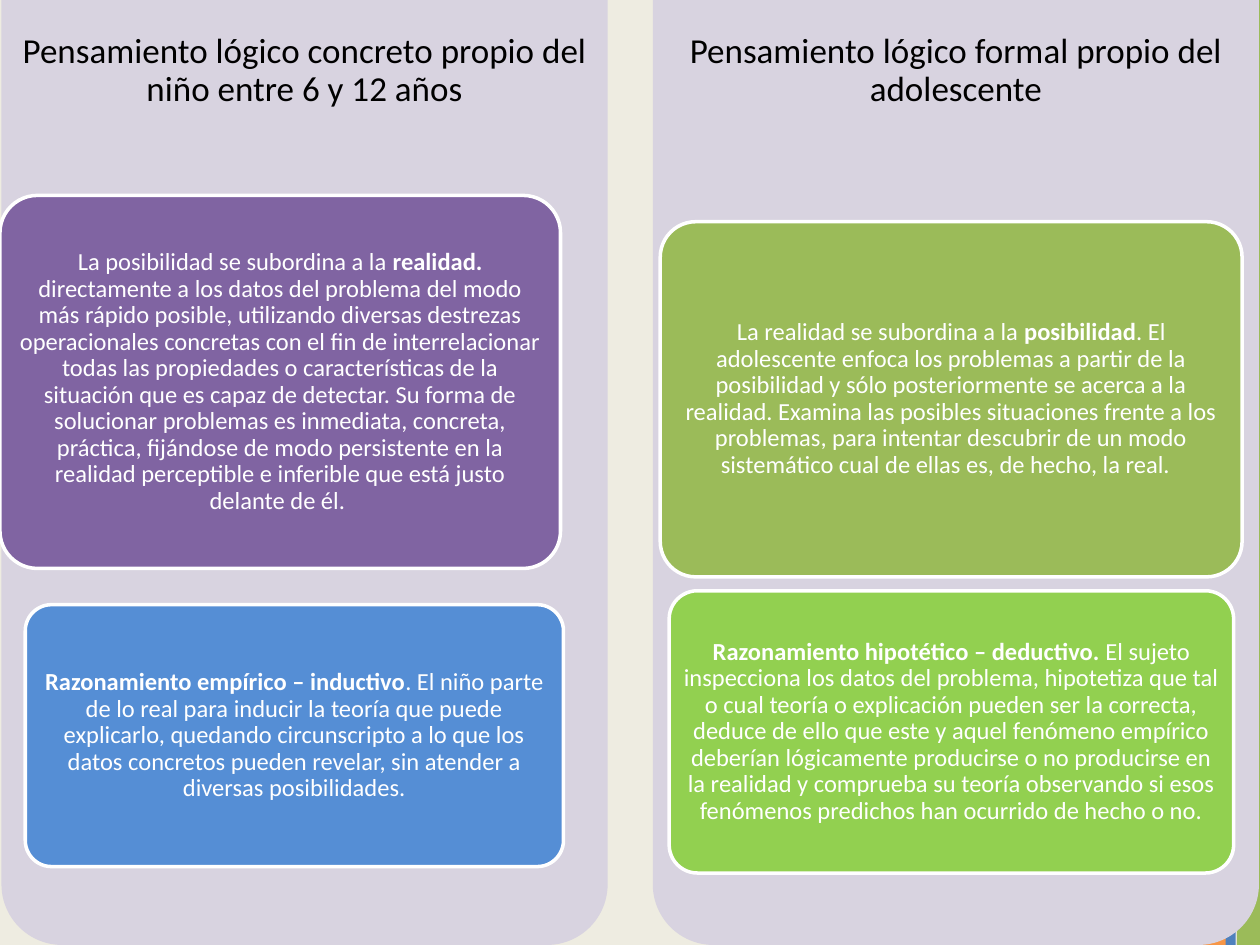
from pptx import Presentation
from pptx import util as u
from pptx.dml.color import RGBColor
from pptx.enum import shapes, text

WIDTH, HEIGHT = 25.4, 19.05
PANEL_TOP, PANEL_WIDTH, HEADING_HEIGHT = -1.68, 12.22, 6.22

STRIPS = [
    (14.76, 9.08, HEIGHT, 0.89, "F79646", 270),
    (15.65, 9.28, HEIGHT, 0.48, "9BBB59", 270),
    (24.71, 0, 0.2, HEIGHT, "4F81BD", 0),
]

COLUMNS = [
    (0.03, "Pensamiento lógico concreto propio del niño entre 6 y 12 años", [
        ((0, 3.94, 11.3, 7.52), "8064A2", [
            ("La posibilidad se subordina a la ", False),
            ("realidad.", True),
            (" directamente a los datos del problema del modo más rápido posible, "
             "utilizando diversas destrezas operacionales concretas con el fin de "
             "interrelacionar todas las propiedades o características de la situación "
             "que es capaz de detectar. Su forma de solucionar problemas es inmediata, "
             "concreta, práctica, fijándose de modo persistente en la realidad "
             "perceptible e inferible que está justo delante de él. ", False)]),
        ((0.51, 12.19, 10.85, 5.28), "558ED5", [
            ("Razonamiento empírico – inductivo", True),
            (". El niño parte de lo real para inducir la teoría que puede explicarlo, "
             "quedando circunscripto a lo que los datos concretos pueden revelar, sin "
             "atender a diversas posibilidades.", False)]),
    ]),
    (13.16, "Pensamiento lógico formal propio del adolescente", [
        ((13.31, 4.47, 11.73, 7.16), "9BBB59", [
            ("La realidad se subordina a la ", False),
            ("posibilidad", True),
            (". El adolescente enfoca los problemas a partir de la posibilidad y sólo "
             "posteriormente se acerca a la realidad. Examina las posibles situaciones "
             "frente a los problemas, para intentar descubrir de un modo sistemático "
             "cual de ellas es, de hecho, la real.  ", False)]),
        ((13.49, 11.91, 11.38, 5.69), "92D050", [
            ("Razonamiento hipotético – deductivo.", True),
            (" El sujeto inspecciona los datos del problema, hipotetiza que tal o cual "
             "teoría o explicación pueden ser la correcta, deduce de ello que este y "
             "aquel fenómeno empírico deberían lógicamente producirse o no producirse "
             "en la realidad y comprueba su teoría observando si esos fenómenos "
             "predichos han ocurrido de hecho o no.", False)]),
    ]),
]


def rgb(value):
    return RGBColor.from_string(value)


def set_attrs(obj, values):
    for name, value in values.items():
        setattr(obj, name, value)


def add_block(s, kind, box, fill, line=None):
    sp = s.shapes.add_shape(kind, *map(u.Cm, box))
    sp.shadow.inherit = False
    sp.fill.solid()
    sp.fill.fore_color.rgb = rgb(fill)
    if line:
        sp.line.color.rgb = rgb(line)
        sp.line.width = u.Pt(2)
    else:
        sp.line.fill.background()
    return sp


def add_rounded(s, box, fill, line=None):
    sp = add_block(s, shapes.MSO_SHAPE.ROUNDED_RECTANGLE, box, fill, line)
    sp.adjustments[0] = 0.1
    return sp


def write(sp, runs, size, color, side, top):
    tf = sp.text_frame
    set_attrs(tf, {
        "word_wrap": True, "vertical_anchor": text.MSO_ANCHOR.MIDDLE,
        "margin_left": u.Cm(side), "margin_right": u.Cm(side),
        "margin_top": u.Cm(top), "margin_bottom": u.Cm(top)})
    p = tf.paragraphs[0]
    set_attrs(p, {"alignment": text.PP_ALIGN.CENTER, "line_spacing": 0.9,
                  "space_after": u.Pt(size * 0.35)})
    for words, bold in runs:
        r = p.add_run()
        r.text = words
        set_attrs(r.font, {"name": "Calibri", "size": u.Pt(size), "bold": bold})
        r.font.color.rgb = rgb(color)


def add_strip(s, left, top, width, height, fill, rotation):
    sp = add_block(s, shapes.MSO_SHAPE.RECTANGLE, (left, top, width, height), fill)
    sp.rotation = rotation


def add_column(s, left, heading, cards):
    add_rounded(s, (left, PANEL_TOP, PANEL_WIDTH, HEIGHT - PANEL_TOP), "D8D3E0")
    box = (left, PANEL_TOP, PANEL_WIDTH, HEADING_HEIGHT)
    title = s.shapes.add_textbox(*map(u.Cm, box))
    write(title, [(heading, False)], 20, "000000", 0.2, 0.2)
    for box, fill, runs in cards:
        card = add_rounded(s, box, fill, "FFFFFF")
        write(card, runs, 14, "FFFFFF", 0.1, 0.08)


def main():
    prs = Presentation()
    set_attrs(prs, {"slide_width": u.Cm(WIDTH), "slide_height": u.Cm(HEIGHT)})
    s = prs.slides.add_slide(prs.slide_layouts[6])
    s.background.fill.solid()
    s.background.fill.fore_color.rgb = rgb("EEECE1")
    for strip in STRIPS:
        add_strip(s, *strip)
    for column in COLUMNS:
        add_column(s, *column)
    prs.save("out.pptx")


if __name__ == "__main__":
    main()
